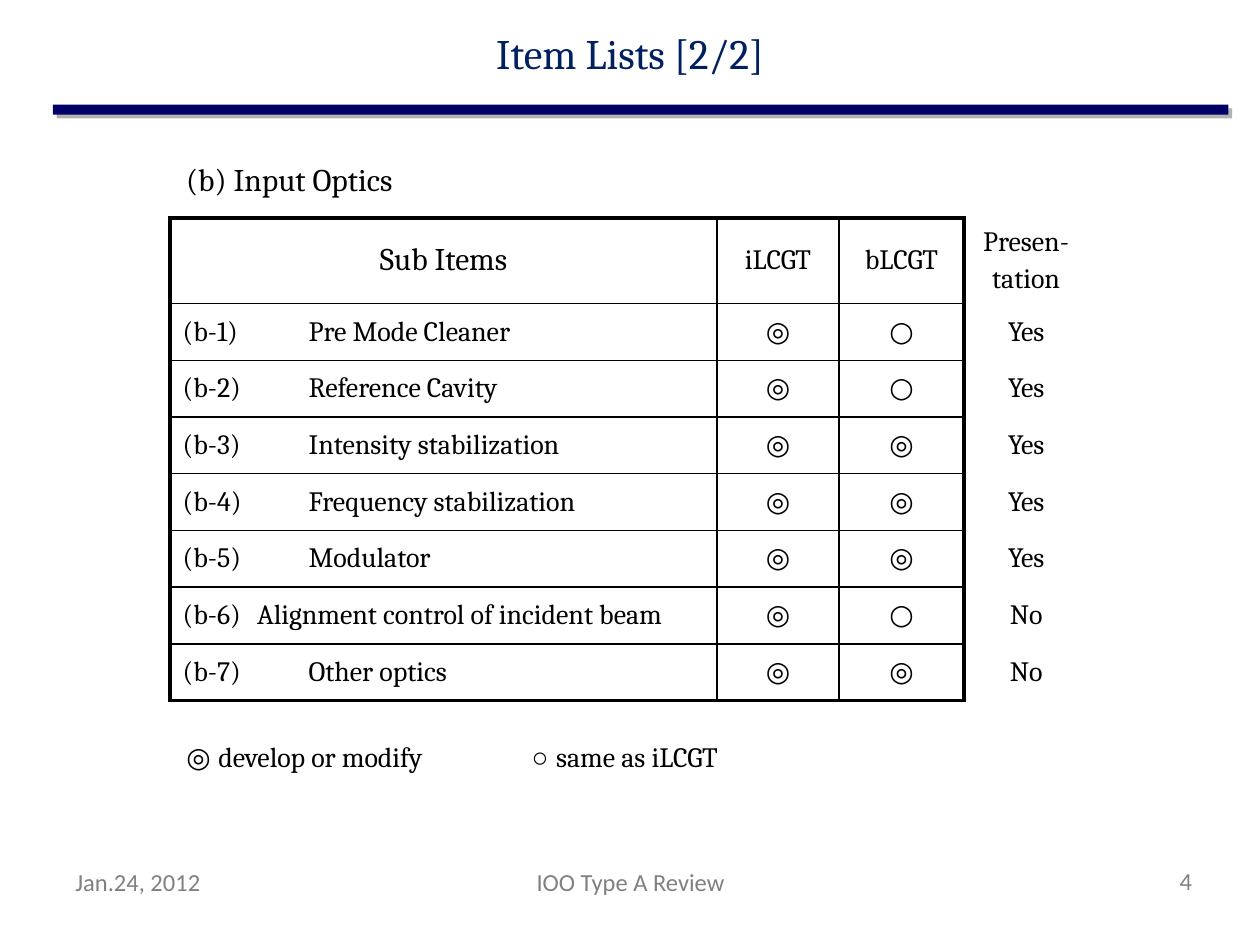
from lxml.etree import SubElement
from pptx import Presentation
from pptx.dml.color import RGBColor
from pptx.enum.shapes import MSO_SHAPE as Shape
from pptx.enum.text import MSO_ANCHOR as Anchor, PP_ALIGN as Align
from pptx.oxml.ns import qn
from pptx.util import Inches, Pt

COLORS = {"text": "000000", "title": "002060", "bar": "000066",
          "bar shade": "B2B2B2", "footer": "808080"}
NO_STYLE = "{2D5ABB26-0587-4C30-8999-92F81FD0307C}"
THIN, THICK = Pt(1), Pt(2.25)


def write(para, text, size, color="text", font="Cambria", align=Align.LEFT, tabs=(), hanging=0):
    """Fill a paragraph; text is a string or a list of (text, font) spans."""
    props = para._p.get_or_add_pPr()
    if hanging:
        props.set("marL", str(Inches(hanging)))
        props.set("indent", str(-Inches(hanging)))
    if tabs:
        tab_list = SubElement(props, qn("a:tabLst"))
        for tab in tabs:
            SubElement(tab_list, qn("a:tab"), pos=str(Inches(tab)), algn="l")
    para.alignment = align
    para.font.size = Pt(size)
    para.font.color.rgb = RGBColor.from_string(COLORS[color])
    if isinstance(text, str):
        para.font.name = font
        para.add_run().text = text
    else:
        for span_text, span_font in text:
            span = para.add_run()
            span.text, span.font.name = span_text, span_font


def set_borders(cell, widths):
    """Draw the left, right, top and bottom border of a cell."""
    props = cell._tc.get_or_add_tcPr()
    for position, (side, width) in enumerate(zip("LRTB", widths)):
        line = props.makeelement(qn(f"a:ln{side}"), {"w": str(width)})
        fill = SubElement(line, qn("a:solidFill"))
        SubElement(fill, qn("a:srgbClr"), val=COLORS["text"])
        props.insert(position, line)


deck = Presentation()
deck.slide_width, deck.slide_height = Inches(10), Inches(7.5)
page = deck.slides.add_slide(deck.slide_layouts.get_by_name("Title Only"))

# Title and its shaded rule
for left, top, color in [(0.45, 0.86, "bar shade"), (0.42, 0.83, "bar")]:
    bar = page.shapes.add_shape(Shape.RECTANGLE, Inches(left), Inches(top),
                                Inches(9.33), Inches(0.08))
    bar.shadow.inherit = False
    bar.fill.solid()
    bar.fill.fore_color.rgb = RGBColor.from_string(COLORS[color])
    bar.line.fill.background()

title = page.shapes.title
title.left, title.top = 0, 0
title.width, title.height = deck.slide_width, Inches(0.84)
title.text_frame.vertical_anchor = Anchor.MIDDLE
write(title.text_frame.paragraphs[0], "Item Lists [2/2]", 24, "title", align=Align.CENTER)

# Item table
items = [("Pre Mode Cleaner", "○", "Yes"),
         ("Reference Cavity", "○", "Yes"),
         ("Intensity stabilization", "◎", "Yes"),
         ("Frequency stabilization", "◎", "Yes"),
         ("Modulator", "◎", "Yes"),
         ("Alignment control of incident beam", "○", "No"),
         ("Other optics", "◎", "No")]
rows = [("Sub Items", "iLCGT", "bLCGT", "Presen-\ntation")]
rows += [(f"(b-{number})\t{name}", "◎", later, shown)
         for number, (name, later, shown) in enumerate(items, 1)]
column_widths = [4.34, 0.97, 0.99, 0.99]
header_height, row_height = 0.68, 0.45
last_row, last_framed = len(rows) - 1, 2

table = page.shapes.add_table(
    len(rows), len(column_widths), Inches(1.35), Inches(1.73), Inches(sum(column_widths)),
    Inches(header_height + row_height * len(items))).table
table.first_row = table.horz_banding = False
table._tbl.tblPr.find(qn("a:tableStyleId")).text = NO_STYLE
for column, width in zip(table.columns, column_widths):
    column.width = Inches(width)

for r, texts in enumerate(rows):
    table.rows[r].height = Inches(row_height if r else header_height)
    for c, text in enumerate(texts):
        cell = table.cell(r, c)
        cell.fill.background()
        cell.vertical_anchor = Anchor.MIDDLE
        is_item = r > 0 and c == 0
        is_long = "Alignment" in text
        for n, line_text in enumerate(text.split("\n")):
            para = cell.text_frame.paragraphs[0] if n == 0 else cell.text_frame.add_paragraph()
            if n:
                para.space_before = Pt(3.2)
            write(para, line_text, 18 if r == c == 0 else 16,
                  align=Align.LEFT if is_item else Align.CENTER,
                  tabs=[0.59 if is_long else 1] if is_item else (),
                  hanging=0.59 if is_long else 0)
        if c <= last_framed:
            set_borders(cell, [THICK if c == 0 else THIN,
                               THICK if c == last_framed else THIN,
                               THICK if r == 0 else THIN,
                               THICK if r == last_row else THIN])

# Heading, legend and footer
legend = [("◎ ", "Arial"), ("develop or modify", "Cambria"),
          ("\t○ ", "Arial"), ("same as iLCGT", "Cambria")]
footer = {"size": 14, "color": "footer", "font": "Calibri"}
labels = [
    ((1.38, 1.22, 2.04, 0.4), "(b) Input Optics", {"size": 18}),
    ((1.38, 5.82, 4.81, 0.37), legend, {"size": 16, "tabs": [2.74, 3.63]}),
    ((0.5, 6.83, 2.33, 0.52), "Jan.24, 2012", footer),
    ((3.42, 6.83, 3.17, 0.52), "IOO Type A Review", {**footer, "align": Align.CENTER}),
    ((8.73, 6.82, 0.83, 0.52), "4", {**footer, "align": Align.RIGHT}),
]
for place, text, style in labels:
    box = page.shapes.add_textbox(*map(Inches, place))
    box.text_frame.word_wrap = True
    write(box.text_frame.paragraphs[0], text, **style)

deck.save("out.pptx")
